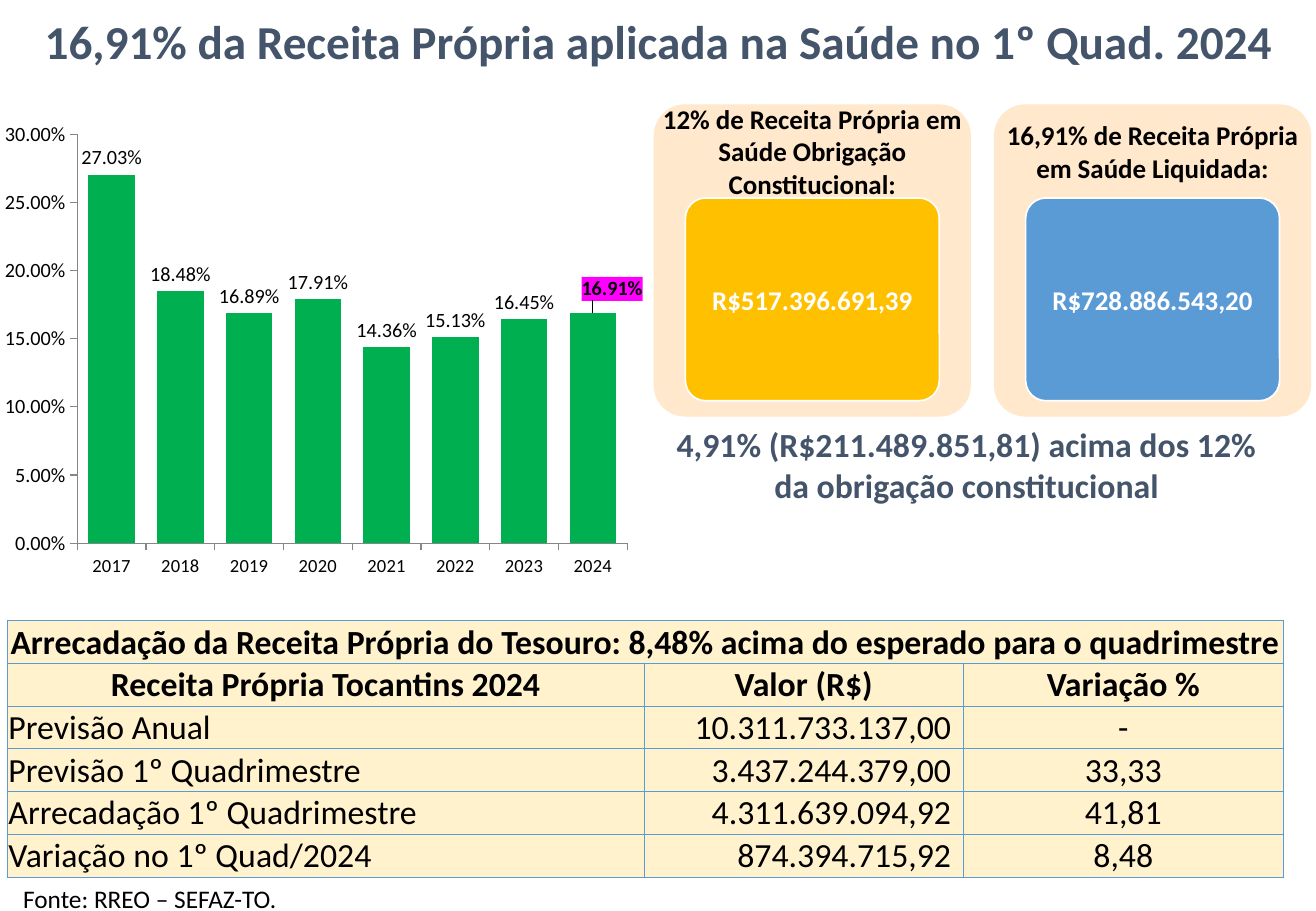
from lxml.etree import SubElement
from pptx import Presentation
from pptx.chart.data import CategoryChartData
from pptx.dml.color import RGBColor
from pptx.enum.chart import XL_CHART_TYPE as ChartType, XL_LABEL_POSITION as LabelPosition
from pptx.enum.chart import XL_TICK_MARK as TickMark
from pptx.enum.shapes import MSO_SHAPE as Shape
from pptx.enum.text import MSO_ANCHOR as Anchor, PP_ALIGN as Align
from pptx.oxml import parse_xml
from pptx.oxml.ns import nsdecls, qn
from pptx.util import Inches, Pt

FONT = "Calibri"
BLACK, WHITE, SLATE = "000000", "FFFFFF", "44546A"
GREEN, MAGENTA, GOLD, BLUE = "00B050", "FF00FF", "FFC000", "5B9BD5"
PEACH, CREAM, GREY = "FFE8CC", "FFF2CC", "868686"

YEARS = range(2017, 2025)
SHARES = [0.2703, 0.1848, 0.1689, 0.1791, 0.1436, 0.1513, 0.1645, 0.1691]
CARDS = [
    ("12% de Receita Própria em Saúde Obrigação Constitucional:", "R$517.396.691,39", GOLD),
    ("16,91% de Receita Própria em Saúde Liquidada:", "R$728.886.543,20", BLUE),
]
TABLE_TITLE = "Arrecadação da Receita Própria do Tesouro: 8,48% acima do esperado para o quadrimestre"
ROWS = [
    ("Receita Própria Tocantins 2024", "Valor (R$)", "Variação %"),
    ("Previsão Anual", "10.311.733.137,00", "-"),
    ("Previsão 1º Quadrimestre", "3.437.244.379,00", "33,33"),
    ("Arrecadação 1º Quadrimestre", "4.311.639.094,92", "41,81"),
    ("Variação no 1º Quad/2024", "874.394.715,92", "8,48"),
]


def color(value):
    return RGBColor.from_string(value)


def style_font(font, size, ink=BLACK, bold=False):
    font.name, font.size, font.bold = FONT, Pt(size), bold
    font.color.rgb = color(ink)


def write(frame, text, size, ink=BLACK, bold=False, align=Align.CENTER, anchor=Anchor.TOP,
          margins=(0.1, 0.05)):
    frame.text = text
    frame.word_wrap = True
    frame.vertical_anchor = anchor
    frame.margin_left = frame.margin_right = Inches(margins[0])
    frame.margin_top = frame.margin_bottom = Inches(margins[1])
    para = frame.paragraphs[0]
    para.alignment = align
    span = para.runs[0]
    style_font(span.font, size, ink, bold)
    return span


def add_text(slide, box, text, size, **options):
    shape = slide.shapes.add_textbox(*map(Inches, box))
    return write(shape.text_frame, text, size, **options)


def add_rounded(slide, box, fill, line=None):
    shape = slide.shapes.add_shape(Shape.ROUNDED_RECTANGLE, *map(Inches, box))
    shape.shadow.inherit = False
    shape.adjustments[0] = 0.1
    shape.fill.solid()
    shape.fill.fore_color.rgb = color(fill)
    if line:
        shape.line.color.rgb = color(line)
        shape.line.width = Pt(1)
    else:
        shape.line.fill.background()
    return shape


def add_title(slide, box, text):
    title = slide.shapes.title
    title.left, title.top, title.width, title.height = map(Inches, box)
    write(title.text_frame, text, 28, SLATE, True, anchor=Anchor.MIDDLE)


def layout_xml(inner=False, **values):
    target = '<c:layoutTarget val="inner"/><c:xMode val="edge"/><c:yMode val="edge"/>' if inner else ""
    parts = "".join(f'<c:{key} val="{value}"/>' for key, value in values.items())
    return parse_xml(f'<c:layout {nsdecls("c")}><c:manualLayout>{target}{parts}'
                     '</c:manualLayout></c:layout>')


def highlight_label(point):
    label = point.data_label
    style_font(label.font, 12, bold=True)
    label.position = LabelPosition.OUTSIDE_END
    text_properties = label.font._element.getparent().getparent().getparent()
    node = text_properties.getparent()
    node.find(qn("c:idx")).addnext(layout_xml(x=0.03, y=-0.015))
    text_properties.addprevious(parse_xml(
        f'<c:numFmt {nsdecls("c")} formatCode="0.00%" sourceLinked="0"/>'))
    text_properties.addprevious(parse_xml(
        f'<c:spPr {nsdecls("c", "a")}><a:solidFill><a:srgbClr val="{MAGENTA}"/>'
        '</a:solidFill></c:spPr>'))


def add_share_chart(slide, box):
    data = CategoryChartData(number_format="0.00%")
    data.categories = [str(year) for year in YEARS]
    data.add_series("Receita Própria", SHARES)
    chart = slide.shapes.add_chart(ChartType.COLUMN_CLUSTERED, *map(Inches, box), data).chart
    chart.has_legend = chart.has_title = False
    style_font(chart.font, 10)

    # Axes
    for axis, size in ((chart.category_axis, 11), (chart.value_axis, 12)):
        style_font(axis.tick_labels.font, size)
        axis.major_tick_mark = TickMark.OUTSIDE
        axis.minor_tick_mark = TickMark.NONE
        axis.has_major_gridlines = False
        axis.format.line.color.rgb = color(GREY)
    scale = chart.value_axis
    scale.minimum_scale, scale.maximum_scale, scale.major_unit = 0, 0.3, 0.05
    scale.tick_labels.number_format = "0.00%"
    scale.tick_labels.number_format_is_linked = False

    # Columns and labels
    plot = chart.plots[0]
    plot.gap_width = 48
    plot.vary_by_categories = False
    series = plot.series[0]
    series.format.fill.solid()
    series.format.fill.fore_color.rgb = color(GREEN)
    labels = series.data_labels
    labels.show_value = True
    labels.number_format, labels.number_format_is_linked = "0.00%", False
    labels.position = LabelPosition.OUTSIDE_END
    style_font(labels.font, 12)
    highlight_label(series.points[len(SHARES) - 1])

    # Plot area
    area = chart._chartSpace.chart.plotArea
    for old in area.findall(qn("c:layout")):
        area.remove(old)
    area.insert(0, layout_xml(inner=True, x=0.11, y=0.03, w=0.86, h=0.87))


def add_card(slide, box, heading, amount, fill):
    left, top, width, height = box
    head, inset = 0.77, 0.26
    add_rounded(slide, box, PEACH)
    add_text(slide, (left, top, width, head), heading, 16, bold=True,
             anchor=Anchor.MIDDLE, margins=(0.07, 0.07))
    value = add_rounded(slide, (left + inset, top + head, width - 2 * inset, height - head - 0.13),
                        fill, WHITE)
    write(value.text_frame, amount, 16, WHITE, True, anchor=Anchor.MIDDLE)


def add_caption(slide, box, text):
    span = add_text(slide, box, text, 20, ink=SLATE, bold=True)
    span.font._element.find(qn("a:solidFill")).addnext(parse_xml(
        f'<a:effectLst {nsdecls("a")}><a:outerShdw blurRad="38100" dist="38100" dir="2700000">'
        '<a:srgbClr val="000000"><a:alpha val="43000"/></a:srgbClr></a:outerShdw></a:effectLst>'))


def style_cell(cell, text, bold, align):
    write(cell.text_frame, text, 20, bold=bold, align=align)
    cell.vertical_anchor = Anchor.MIDDLE
    cell.margin_left = cell.margin_top = Inches(0.01)
    cell.margin_right = Inches(0.1 if align == Align.RIGHT else 0.01)
    cell.margin_bottom = 0


def finish_cell(cell):
    properties = cell._tc.get_or_add_tcPr()
    for side in ("lnL", "lnR", "lnT", "lnB"):
        line = SubElement(properties, qn(f"a:{side}"), w=str(Pt(0.5)))
        SubElement(SubElement(line, qn("a:solidFill")), qn("a:srgbClr"), val=BLUE)
    cell.fill.solid()
    cell.fill.fore_color.rgb = color(CREAM)


def add_revenue_table(slide, box):
    table = slide.shapes.add_table(len(ROWS) + 1, 3, *map(Inches, box)).table
    for column, width in zip(table.columns, (5.24, 2.63, 2.63)):
        column.width = Inches(width)
    table.cell(0, 0).merge(table.cell(0, 2))
    style_cell(table.cell(0, 0), TABLE_TITLE, True, Align.CENTER)
    for row, texts in enumerate(ROWS, 1):
        heading = row == 1
        for column, text in enumerate(texts):
            align = Align.CENTER if heading else (Align.LEFT, Align.RIGHT, Align.CENTER)[column]
            style_cell(table.cell(row, column), text, heading, align)
    for cell in table.iter_cells():
        finish_cell(cell)


def main():
    deck = Presentation()
    deck.slide_width, deck.slide_height = Inches(10.83), Inches(7.5)
    slide = deck.slides.add_slide(deck.slide_layouts[5])

    add_title(slide, (0, 0.05, 10.83, 0.57),
              "16,91% da Receita Própria aplicada na Saúde no 1º Quad. 2024")
    add_share_chart(slide, (0.04, 0.99, 5.28, 3.87))
    for index, card in enumerate(CARDS):
        add_card(slide, (5.38 + 2.8 * index, 0.86, 2.61, 2.57), *card)
    add_caption(slide, (5.34, 3.44, 5.23, 0.77),
                "4,91% (R$211.489.851,81) acima dos 12% da obrigação constitucional")
    add_revenue_table(slide, (0.06, 5.11, 10.5, 2.11))
    add_text(slide, (0.04, 7.2, 6.01, 0.4), "Fonte: RREO – SEFAZ-TO.", 15,
             align=Align.LEFT, margins=(0.15, 0.07))
    deck.save("out.pptx")


if __name__ == "__main__":
    main()
